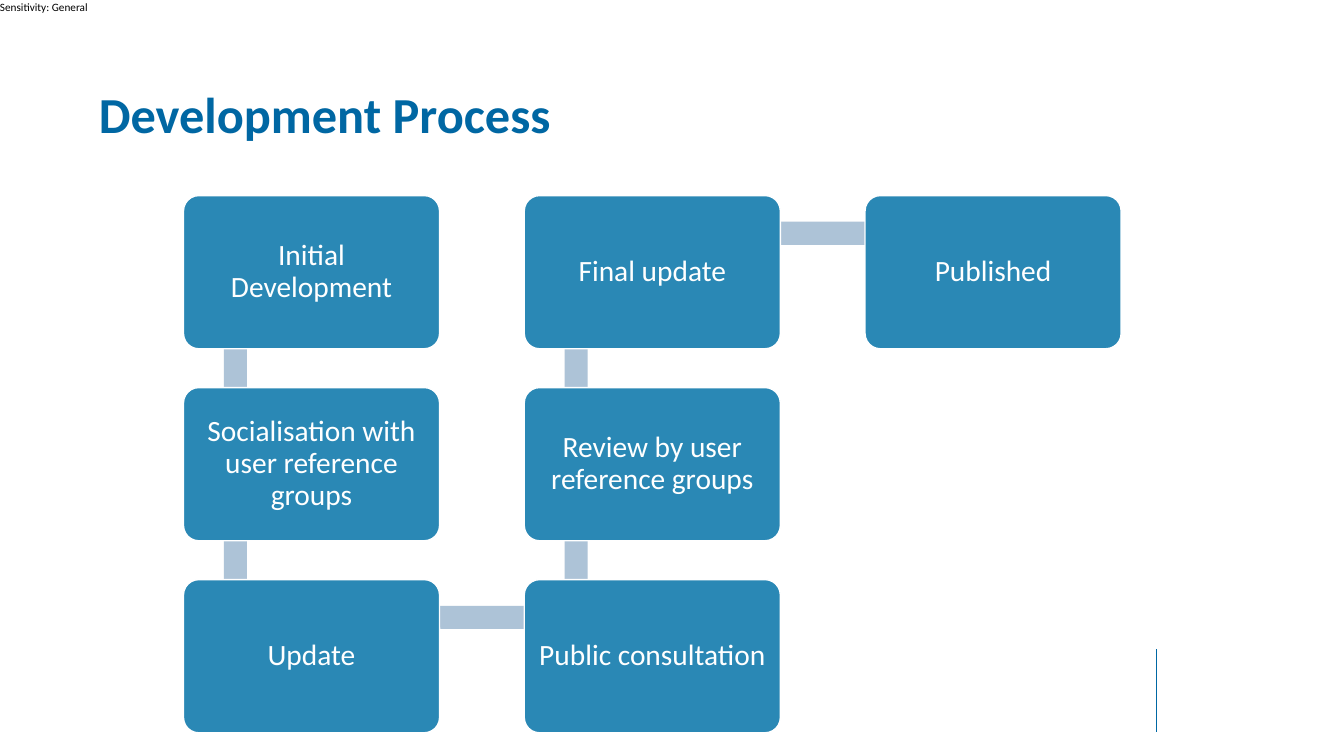
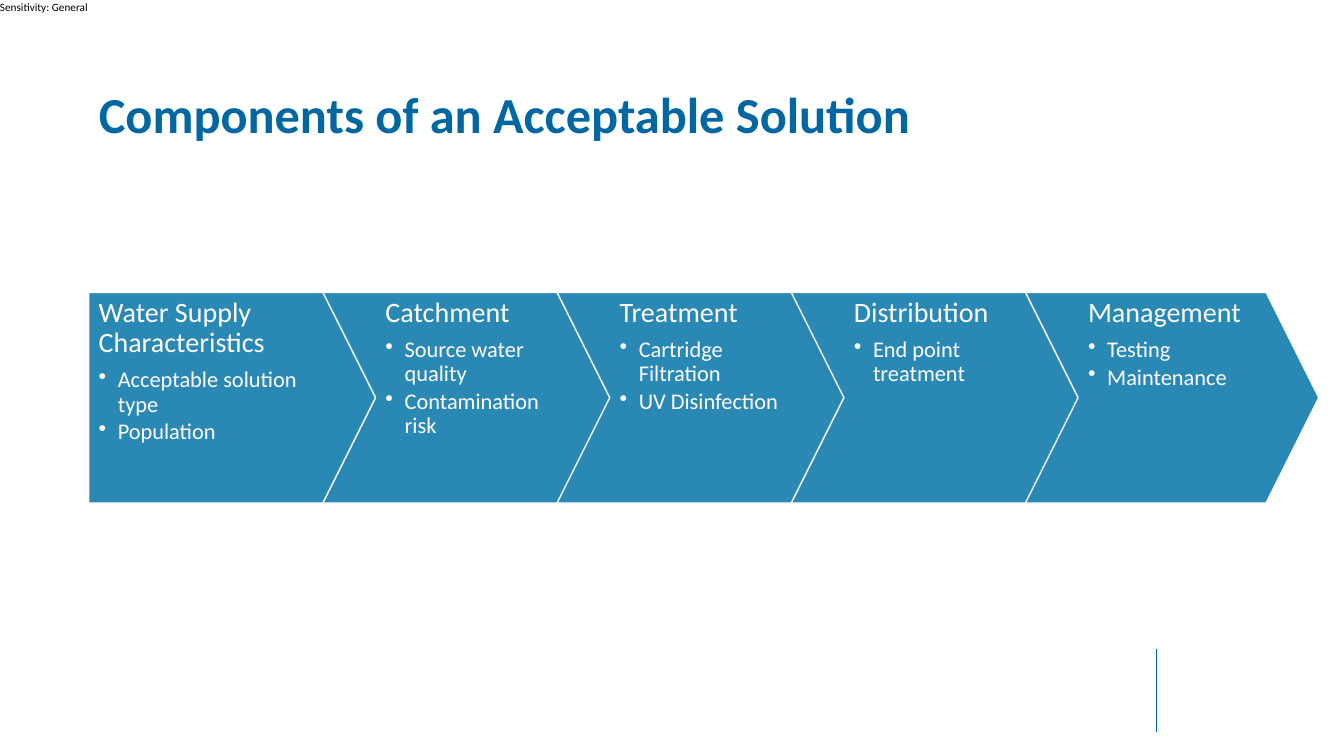
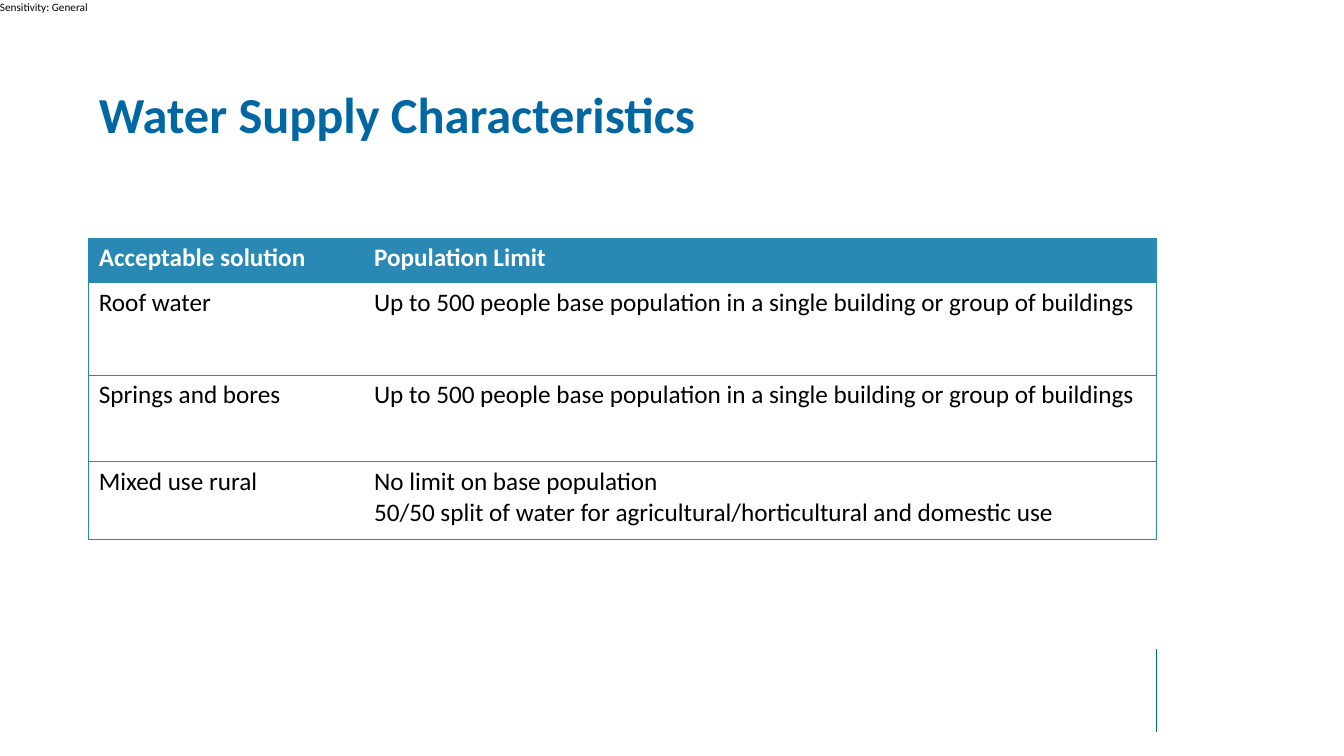
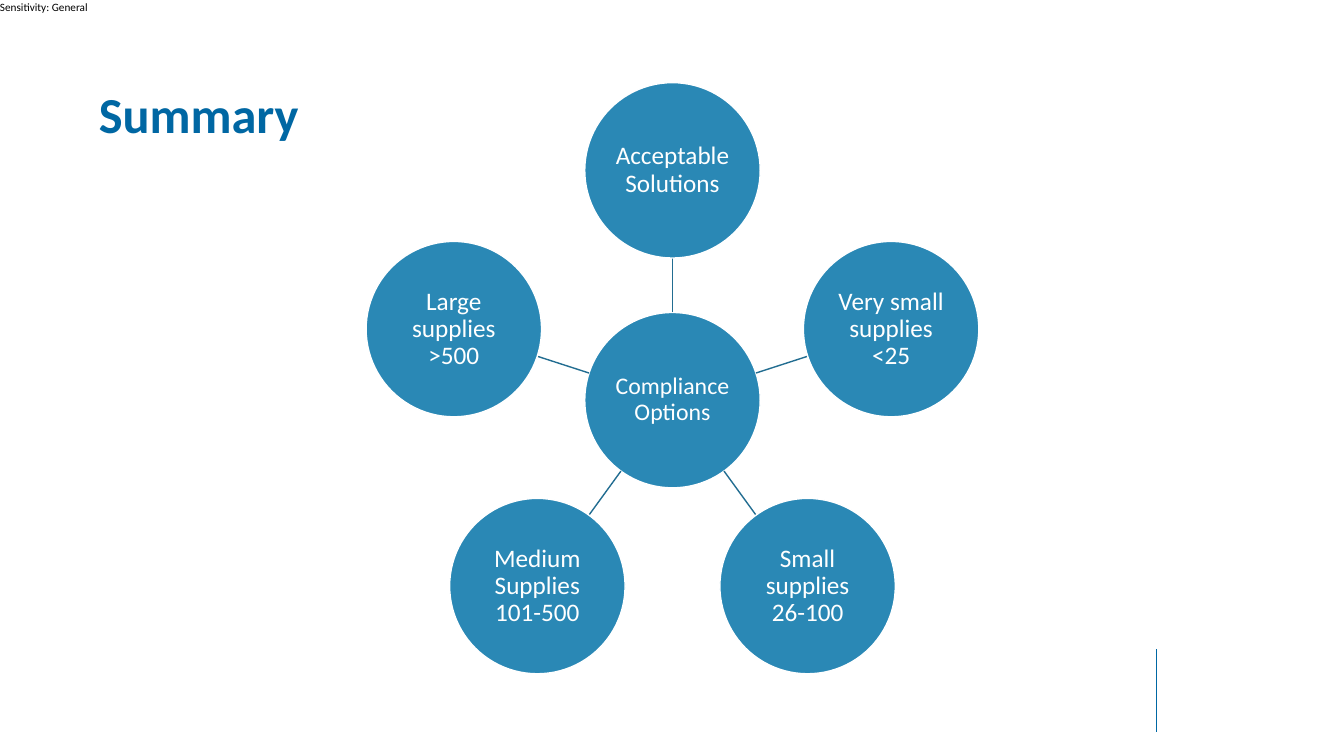
import math

from lxml import etree
from pptx import Presentation
from pptx.dml.color import RGBColor
from pptx.enum.shapes import MSO_CONNECTOR, MSO_SHAPE
from pptx.enum.text import MSO_ANCHOR, MSO_AUTO_SIZE, PP_ALIGN
from pptx.oxml.ns import qn
from pptx.util import Inches, Pt

LEFT, CENTER = PP_ALIGN.LEFT, PP_ALIGN.CENTER
TOP, MIDDLE = MSO_ANCHOR.TOP, MSO_ANCHOR.MIDDLE
NO_AUTOFIT = MSO_AUTO_SIZE.NONE
STRAIGHT = MSO_CONNECTOR.STRAIGHT
RECTANGLE, ROUNDED = MSO_SHAPE.RECTANGLE, MSO_SHAPE.ROUNDED_RECTANGLE
PENTAGON, CHEVRON, OVAL = MSO_SHAPE.PENTAGON, MSO_SHAPE.CHEVRON, MSO_SHAPE.OVAL

FONT = "Calibri"
NAVY, BLUE, PALE, SPOKE = "0067A3", "2A88B5", "ADC3D7", "226D91"
WHITE, BLACK = "FFFFFF", "000000"
TITLE_ONLY = 5

# Each step is a label with its column and row in the grid
PROCESS = [
    ("Initial Development", 0, 0),
    ("Socialisation with user reference groups", 0, 1),
    ("Update", 0, 2),
    ("Public consultation", 1, 2),
    ("Review by user reference groups", 1, 1),
    ("Final update", 1, 0),
    ("Published", 2, 0),
]
COMPONENTS = [
    ("Water Supply Characteristics", ["Acceptable solution type", "Population"]),
    ("Catchment", ["Source water quality", "Contamination risk"]),
    ("Treatment", ["Cartridge Filtration", "UV Disinfection"]),
    ("Distribution", ["End point treatment"]),
    ("Management", ["Testing", "Maintenance"]),
]
SAME_LIMIT = "Up to 500 people base population in a single building or group of buildings"
LIMITS = [
    ("Acceptable solution", "Population Limit"),
    ("Roof water", SAME_LIMIT),
    ("Springs and bores", SAME_LIMIT),
    ("Mixed use rural", "No limit on base population\n"
     "50/50 split of water for agricultural/horticultural and domestic use"),
]
OPTIONS = ["Acceptable Solutions", "Very small supplies <25", "Small supplies 26-100",
           "Medium Supplies 101-500", "Large supplies >500"]


def rgb(color):
    return RGBColor.from_string(color)


def inches(*lengths):
    return [Inches(length) for length in lengths]


def style(para, size, color, bold=False, align=LEFT, spacing=None, after=None):
    para.alignment = align
    para.line_spacing = spacing
    if after is not None:
        para.space_after = Pt(after)
    para.font.name = FONT
    para.font.size = Pt(size)
    para.font.bold = bold
    para.font.color.rgb = rgb(color)


def set_insets(frame, left, top, right, bottom):
    frame.margin_left, frame.margin_top, frame.margin_right, frame.margin_bottom = inches(
        left, top, right, bottom)


def add_block(slide, kind, box, fill=BLUE, outline=WHITE, adjust=None):
    block = slide.shapes.add_shape(kind, *inches(*box))
    block.shadow.inherit = False
    block.fill.solid()
    block.fill.fore_color.rgb = rgb(fill)
    if outline:
        block.line.color.rgb = rgb(outline)
        block.line.width = Pt(1)
    else:
        block.line.fill.background()
    if adjust is not None:
        block.adjustments[0] = adjust
    return block


def add_label(block, text, size, inset):
    """Write one centred white paragraph in a block."""
    frame = block.text_frame
    frame.word_wrap = True
    frame.vertical_anchor = MIDDLE
    set_insets(frame, inset, inset, inset, inset)
    frame.text = text
    style(frame.paragraphs[0], size, WHITE, align=CENTER, spacing=0.9)


def add_line(slide, start, end, color, width):
    line = slide.shapes.add_connector(STRAIGHT, *inches(*start, *end))
    line.line.color.rgb = rgb(color)
    line.line.width = Pt(width)
    etree.SubElement(line.element.spPr, qn("a:effectLst"))


def add_page(deck, title):
    """Add a slide with its title, sensitivity label and footer rule."""
    slide = deck.slides.add_slide(deck.slide_layouts[TITLE_ONLY])
    label = slide.shapes.add_textbox(*inches(0, 0, 0.9, 0.13)).text_frame
    set_insets(label, 0, 0, 0, 0)
    label.word_wrap = False
    label.text = "Sensitivity: General"
    style(label.paragraphs[0], 8, BLACK)
    add_line(slide, (11.47, 6.44), (11.47, 7.26), NAVY, 0.5)

    heading = slide.shapes.title
    heading.left, heading.top, heading.width, heading.height = inches(0.88, 0.84, 11.81, 0.62)
    frame = heading.text_frame
    frame.text = title
    frame.auto_size = NO_AUTOFIT
    frame.vertical_anchor = TOP
    style(frame.paragraphs[0], 36, NAVY, bold=True, spacing=0.9)
    return slide


def add_process(slide, box):
    """Snake the steps through a 3 by 3 grid, with a bar from each to the next."""
    left, top, width, height = box
    step_width, step_height, bar = 2.54, 1.52, 0.23
    column_pitch = (width - step_width) / 2
    row_pitch = (height - step_height) / 2
    places = [(left + column * column_pitch, top + row * row_pitch)
              for _, column, row in PROCESS]
    for index, (text, _, _) in enumerate(PROCESS):
        x, y = places[index]
        if index + 1 < len(PROCESS):
            next_x, next_y = places[index + 1]
            if next_x == x:
                bar_box = (x + 0.4, min(y, next_y) + 0.38, bar, row_pitch)
            else:
                bar_box = (x + 0.52, y + 0.26, column_pitch, bar)
            add_block(slide, RECTANGLE, bar_box, PALE, None)
        step = add_block(slide, ROUNDED, (x, y, step_width, step_height), adjust=0.1)
        add_label(step, text, 21, 0.09)


def add_bullet(para):
    para.level = 1
    properties = para._p.get_or_add_pPr()
    properties.set("marL", str(Inches(0.19)))
    properties.set("indent", str(-Inches(0.19)))
    etree.SubElement(properties, qn("a:buChar"), char="•")


def add_components(slide, box):
    """Lay overlapping arrows evenly across the box."""
    left, top, width, height = box
    arrow_width = 2.91
    pitch = (width - arrow_width) / (len(COMPONENTS) - 1)
    for index, (heading, points) in enumerate(COMPONENTS):
        kind, right_inset = (CHEVRON, 0.1) if index else (PENTAGON, 0.41)
        arrow = add_block(slide, kind, (left + index * pitch, top, arrow_width, height),
                          adjust=0.25)
        frame = arrow.text_frame
        frame.word_wrap = True
        frame.vertical_anchor = TOP
        set_insets(frame, 0.1, 0.06, right_inset, 0.06)
        frame.text = heading
        style(frame.paragraphs[0], 20, WHITE, spacing=0.9, after=7)
        for point in points:
            para = frame.add_paragraph()
            para.text = point
            add_bullet(para)
            style(para, 16, WHITE, spacing=0.9, after=2.4)


def set_borders(cell, visible):
    """Draw the named sides of a cell and clear the others."""
    properties = cell._tc.get_or_add_tcPr()
    for side in "LRTB":
        line = etree.SubElement(properties, qn("a:ln" + side), w=str(Pt(0.5)))
        if side in visible:
            fill = etree.SubElement(line, qn("a:solidFill"))
            etree.SubElement(fill, qn("a:srgbClr"), val=BLUE)
        else:
            etree.SubElement(line, qn("a:noFill"))


def add_limits(slide, box):
    table = slide.shapes.add_table(len(LIMITS), 2, *inches(*box)).table
    table.horz_banding = False
    for column, width in zip(table.columns, (2.73, 7.86)):
        column.width = Inches(width)
    for row, height in zip(table.rows, (0.44, 0.92, 0.86, 0.77)):
        row.height = Inches(height)
    for row_index, texts in enumerate(LIMITS):
        header = row_index == 0
        for column_index, text in enumerate(texts):
            cell = table.cell(row_index, column_index)
            set_borders(cell, "TB" + "LR"[column_index])
            if header:
                cell.fill.solid()
                cell.fill.fore_color.rgb = rgb(BLUE)
            else:
                cell.fill.background()
            cell.text = text
            for para in cell.text_frame.paragraphs:
                style(para, 18, WHITE if header else BLACK, bold=header)


def add_options(slide, box):
    """Set the options on a ring around the hub, clockwise from the top."""
    left, top, width, _ = box
    radius, ring = 0.87, 2.28
    hub_x, hub_y = left + width / 2, top + radius + ring

    def point(angle, distance):
        return hub_x + distance * math.sin(angle), hub_y - distance * math.cos(angle)

    def add_disc(center, text, size):
        x, y = center
        disc = add_block(slide, OVAL, (x - radius, y - radius, 2 * radius, 2 * radius))
        add_label(disc, text, size, 0.01)

    add_disc((hub_x, hub_y), "Compliance Options", 17)
    for index, text in enumerate(OPTIONS):
        angle = index * math.tau / len(OPTIONS)
        add_line(slide, point(angle, radius), point(angle, ring - radius), SPOKE, 1)
        add_disc(point(angle, ring), text, 18)


def main():
    deck = Presentation()
    deck.slide_width, deck.slide_height = inches(13.33, 7.5)
    add_process(add_page(deck, "Development Process"), (1.82, 1.94, 9.3, 5.33))
    add_components(add_page(deck, "Components of an Acceptable Solution"),
                   (0.88, 2.9, 12.2, 2.09))
    add_limits(add_page(deck, "Water Supply Characteristics"), (0.88, 2.36, 10.59, 2.99))
    add_options(add_page(deck, "Summary"), (3.62, 0.82, 6.1, 5.87))
    deck.save("out.pptx")


if __name__ == "__main__":
    main()
